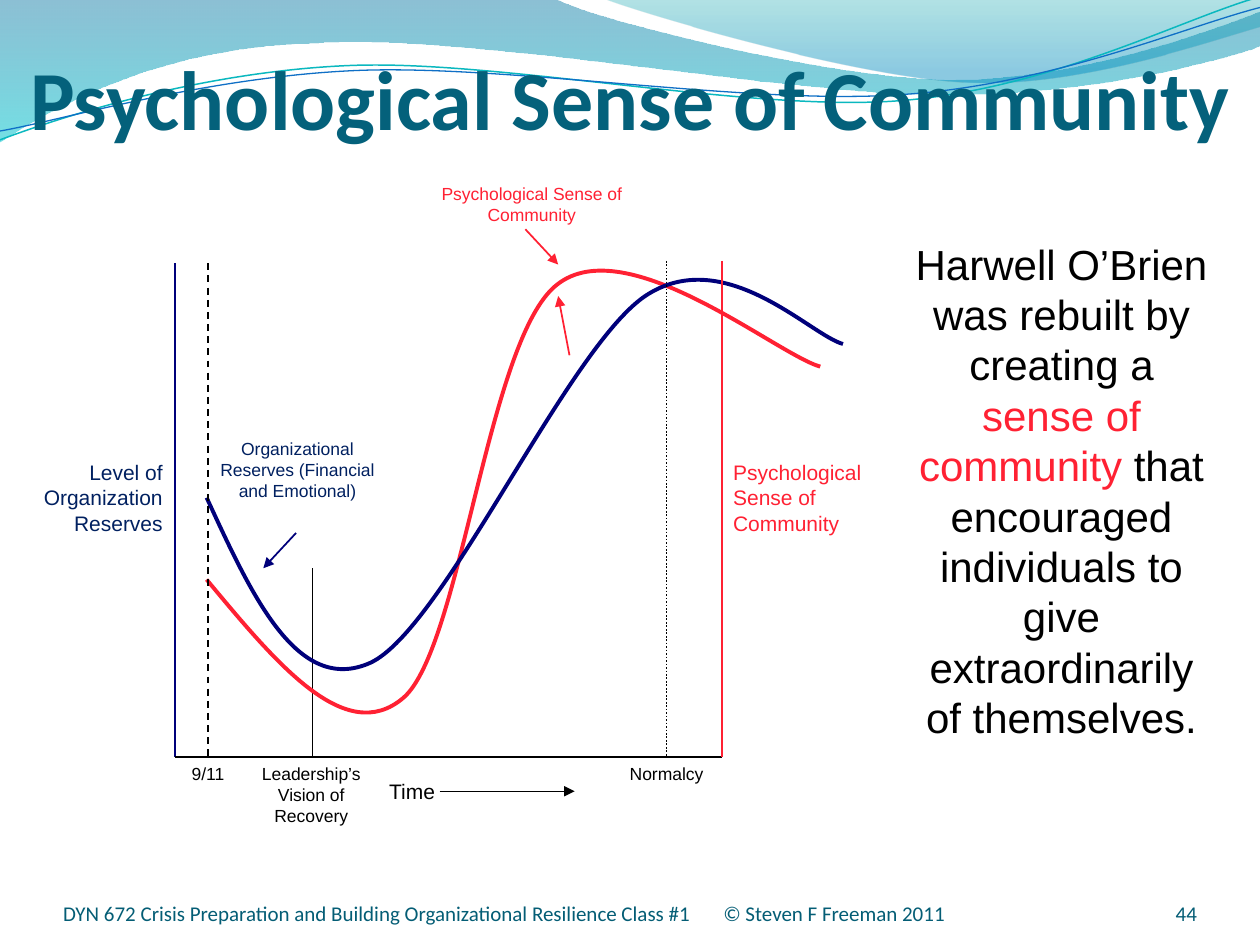
from math import cos, radians, sin

from lxml.etree import SubElement
from pptx import Presentation
from pptx.dml.color import RGBColor
from pptx.enum.dml import MSO_LINE
from pptx.enum.shapes import MSO_CONNECTOR
from pptx.enum.text import MSO_ANCHOR, PP_ALIGN
from pptx.oxml.ns import qn
from pptx.util import Inches, Pt

BLACK = RGBColor(0x00, 0x00, 0x00)
RED = RGBColor(0xFF, 0x21, 0x33)
NAVY = RGBColor(0x00, 0x00, 0x7A)
LABEL_NAVY = RGBColor(0x00, 0x20, 0x60)
TITLE_TEAL = RGBColor(0x04, 0x61, 0x7B)
FOOTER_TEAL = RGBColor(0x04, 0x5D, 0x75)
WAVE_BLUE = RGBColor(0x00, 0x74, 0xA1)
WAVE_CYAN = RGBColor(0x00, 0xC6, 0xCF)
CREST_TEAL = RGBColor(0x00, 0xA1, 0xA9)
CREST_BLUE = RGBColor(0x00, 0x8B, 0xBF)
RIBBON_CYAN = RGBColor(0x0A, 0xB8, 0xBF)
RIBBON_BLUE = RGBColor(0x0F, 0x6F, 0xC6)
LEFT, CENTER, RIGHT = PP_ALIGN.LEFT, PP_ALIGN.CENTER, PP_ALIGN.RIGHT


def add_text(slide, box, paragraphs, size, color, align=LEFT, font="Arial", bold=False, **frame_format):
    """Place paragraphs, each a list of (text, color or None) runs, in box."""
    frame = slide.shapes.add_textbox(*map(Inches, box)).text_frame
    for name, value in {"word_wrap": True, **frame_format}.items():
        setattr(frame, name, value)
    for index, runs in enumerate(paragraphs):
        paragraph = frame.add_paragraph() if index else frame.paragraphs[0]
        paragraph.alignment = align
        for text, run_color in runs:
            run = paragraph.add_run()
            run.text = text
            for name, value in {"name": font, "size": Pt(size), "bold": bold}.items():
                setattr(run.font, name, value)
            run.font.color.rgb = run_color or color
    return frame


def add_line(slide, start, end, color=BLACK, width=1, dash=None, arrow=False):
    line = slide.shapes.add_connector(MSO_CONNECTOR.STRAIGHT, *map(Inches, (*start, *end)))
    line.line.color.rgb = color
    line.line.width = Pt(width)
    if dash:
        line.line.dash_style = dash
    if arrow:
        SubElement(line.line._get_or_add_ln(), qn("a:tailEnd"), type="triangle")
    SubElement(line._element.spPr, qn("a:effectLst"))


def add_curve(slide, points, straight=(), closed=False):
    """Draw Bezier segments, three points each; indices in straight are line ends."""
    emu = [(Inches(x), Inches(y)) for x, y in points]
    builder = slide.shapes.build_freeform(*emu[0])
    builder.add_line_segments(emu[1:], close=closed)
    curve = builder.convert_to_shape()
    curve.shadow.inherit = False
    outline = next(curve._element.iter(qn("a:path")))
    sides = outline.findall(qn("a:lnTo"))
    bends = [side for index, side in enumerate(sides[:len(points) - 1], 1) if index not in straight]
    for first, second, third in zip(*[iter(bends)] * 3):
        first.tag = qn("a:cubicBezTo")
        for side in (second, third):
            first.append(side[0])
            outline.remove(side)
    return curve


def add_stroke(slide, points, color, width):
    curve = add_curve(slide, points)
    curve.fill.background()
    curve.line.color.rgb = color
    curve.line.width = Pt(width)
    return curve


def add_wave(slide, points, straight, stops):
    """Closed wave with a top-down gradient of (position, color, opacity) stops."""
    wave = add_curve(slide, points, straight, closed=True)
    wave.line.fill.background()
    wave.fill.gradient()
    wave.fill.gradient_angle = 270
    for stop, (position, color, opacity) in zip(wave.fill.gradient_stops, stops):
        stop.position = position
        stop.color.rgb = color
        shade = next(stop._gs.iter(qn("a:srgbClr")))
        SubElement(shade, qn("a:alpha"), val=str(opacity * 1000))


def add_ribbon(slide, center, points, color, width, tilt=2.7):
    """Thin curve laid level, then tilted anticlockwise about its center."""
    (cx, cy), c, s = center, cos(radians(tilt)), sin(radians(tilt))
    level = [(cx + (x - cx) * c - (y - cy) * s, cy + (x - cx) * s + (y - cy) * c) for x, y in points]
    add_stroke(slide, level, color, width).rotation = 360 - tilt


def draw_header_waves(slide, left, top):
    def at(*points):
        return [(left + x, top + y) for x, y in points]

    add_wave(slide, at((0, 0), (4.4, -0.01), (4.76, 0.17), (6.64, 0.63), (7.58, 0.63),
                       (8.53, 0.63), (9.58, 0.26), (10, 0.09), (10.01, 0.36), (9.83, 0.44),
                       (8.7, 0.76), (7.46, 0.75), (6.22, 0.75), (3.82, 0.28), (2.57, 0.34),
                       (1.29, 0.36), (0.46, 0.83), (-0.01, 1.13)),
             {1, 8}, [(0, WAVE_BLUE, 45), (1, WAVE_CYAN, 55)])
    add_wave(slide, at((4.79, -0.01), (5.09, 0.11), (6.82, 0.62), (7.69, 0.65),
                       (8.56, 0.69), (9.61, 0.32), (10, 0.21), (10, 0)),
             {7}, [(0, CREST_TEAL, 30), (0.8, CREST_BLUE, 45)])
    add_ribbon(slide, (left + 4.99, top + 0.58),
               at((0, 1.11), (0.48, 0.93), (1.58, 0.57), (2.77, 0.52), (3.95, 0.47),
                  (5.93, 0.89), (7.13, 0.8), (8.33, 0.71), (9.38, 0.15), (9.98, -0.02)),
               RIBBON_CYAN, 0.85)
    add_ribbon(slide, (left + 5, top + 0.59),
               at((0, 1.04), (0.47, 0.96), (1.64, 0.61), (2.83, 0.56), (4.03, 0.51),
                  (5.97, 0.84), (7.17, 0.75), (8.36, 0.67), (9.41, 0.21), (10, 0.06)),
               RIBBON_BLUE, 0.75)


def draw_diagram(slide, left, top, width, height):
    """Resilience curves between the two vertical axes of the given plot box."""
    right, bottom = left + width, top + height

    def at(*points):
        return [(left + x, top + y) for x, y in points]

    # Axes and time markers
    add_line(slide, (left, top), (left, bottom), NAVY)
    add_line(slide, (right, bottom), (left, bottom))
    add_line(slide, (left + 1.09, bottom), (left + 1.09, top + 2.42))

    # Community and reserves curves
    add_stroke(slide, at((0.25, 2.51), (0.8, 3.17), (1.35, 3.84), (1.81, 3.45), (2.27, 3.06),
                         (2.48, 0.6), (3.03, 0.17), (3.58, -0.27), (4.77, 0.72), (5.12, 0.82)),
               RED, 2.25)
    add_stroke(slide, at((0.25, 1.86), (0.61, 2.64), (0.97, 3.43), (1.55, 3.17), (2.13, 2.9),
                         (3.11, 0.68), (3.73, 0.26), (4.36, -0.16), (5.04, 0.57), (5.3, 0.64)),
               NAVY, 2.25)
    add_line(slide, (right, top - 0.02), (right, bottom), RED)
    add_line(slide, (left + 3.9, top - 0.02), (left + 3.9, bottom), dash=MSO_LINE.ROUND_DOT)
    add_line(slide, (left + 0.26, top), (left + 0.26, bottom + 0.02), dash=MSO_LINE.DASH)

    # Pointers to the curves and the time arrow
    for start, end, color, weight in (
        ((3.13, 0.73), (3.04, 0.26), RED, 1),
        ((0.96, 2.14), (0.7, 2.42), NAVY, 1),
        ((2.78, -0.27), (3.04, 0.01), RED, 1),
        ((2.1, 4.19), (3.17, 4.19), BLACK, 0.75),
    ):
        add_line(slide, *at(start, end), color, weight, arrow=True)

    # Labels
    for x, y, w, h, text, size, color, align in (
        (-1.39, 1.51, 1.39, 0.71, "Level of Organization Reserves", 12, LABEL_NAVY, RIGHT),
        (0.45, 3.92, 1.26, 0.6, "Leadership’s Vision of Recovery", 10, BLACK, CENTER),
        (-0.13, 3.92, 0.78, 0.27, "9/11", 10, BLACK, CENTER),
        (3.38, 3.92, 1.04, 0.27, "Normalcy", 10, BLACK, CENTER),
        (0.23, 1.34, 1.48, 0.6, "Organizational Reserves (Financial and Emotional)", 10, LABEL_NAVY, CENTER),
        (1.83, -0.69, 2, 0.43, "Psychological Sense of Community", 10, RED, CENTER),
        (4.33, 1.51, 1.39, 0.7, "Psychological Sense of Community", 12, RED, LEFT),
        (1.6, 4.04, 1.39, 0.3, "Time", 12, BLACK, LEFT),
    ):
        add_text(slide, (left + x, top + y, w, h), [[(text, None)]], size, color, align)


def write_takeaway(slide, *box):
    add_text(slide, box, [
        [("Harwell O’Brien", None)],
        [("was rebuilt by creating a ", None), ("sense of community", RED),
         (" that encouraged individuals to give extraordinarily of themselves.", None)],
    ], 24, BLACK, CENTER)


def write_title(slide, *box):
    add_text(slide, box, [[("Psychological Sense of Community", None)]], 48, TITLE_TEAL,
             font="Calibri", bold=True, vertical_anchor=MSO_ANCHOR.BOTTOM,
             margin_left=0, margin_right=0, margin_bottom=0)


def write_footer(slide, left, top, width, height):
    flush = {f"margin_{side}": 0 for side in ("left", "top", "right", "bottom")}
    style = {"font": "Calibri", "vertical_anchor": MSO_ANCHOR.BOTTOM, **flush}
    number_width = 0.83
    add_text(slide, (left + width - number_width, top, number_width, height),
             [[("44", None)]], 12, FOOTER_TEAL, RIGHT, **style)
    course = "DYN 672 Crisis Preparation and Building Organizational Resilience Class #1"
    credit = add_text(slide, (left, top, 8.08, height),
                      [[(f"{course}\t© Steven F Freeman 2011", None)]], 12, FOOTER_TEAL, **style)
    # Tab stop for the copyright
    tabs = SubElement(credit.paragraphs[0]._p.get_or_add_pPr(), qn("a:tabLst"))
    SubElement(tabs, qn("a:tab"), pos=str(Inches(5.24)), algn="l")


def main():
    deck = Presentation()
    deck.slide_width, deck.slide_height = Inches(10), Inches(7.5)
    slide = deck.slides.add_slide(deck.slide_layouts[6])
    draw_header_waves(slide, 0, 0)
    draw_diagram(slide, 1.39, 2.09, 4.34, 3.92)
    write_takeaway(slide, 7.16, 1.84, 2.53, 4.09)
    write_title(slide, 0.24, 0.23, 9.56, 0.94)
    write_footer(slide, 0.5, 6.95, 9, 0.4)
    deck.save("out.pptx")


if __name__ == "__main__":
    main()
